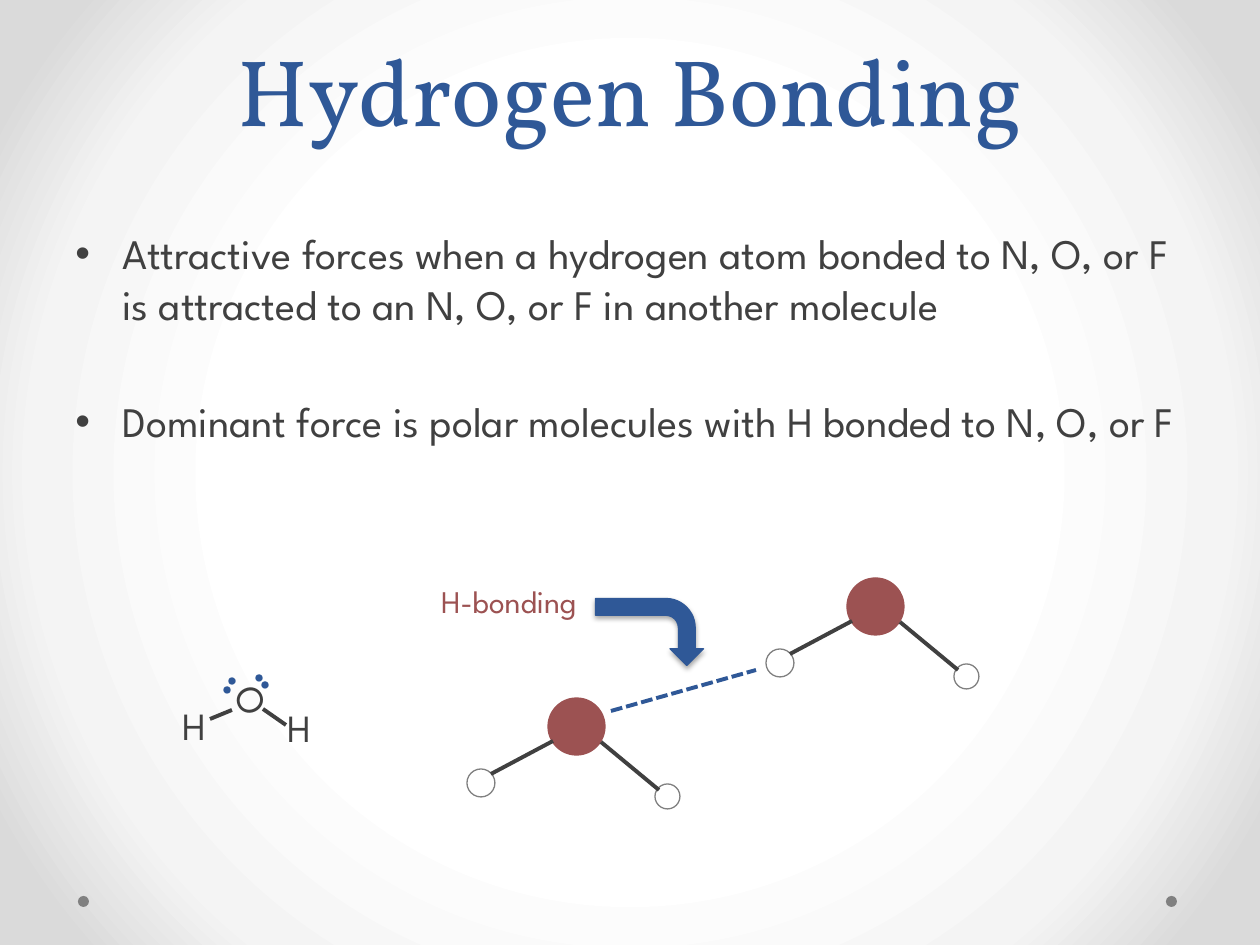
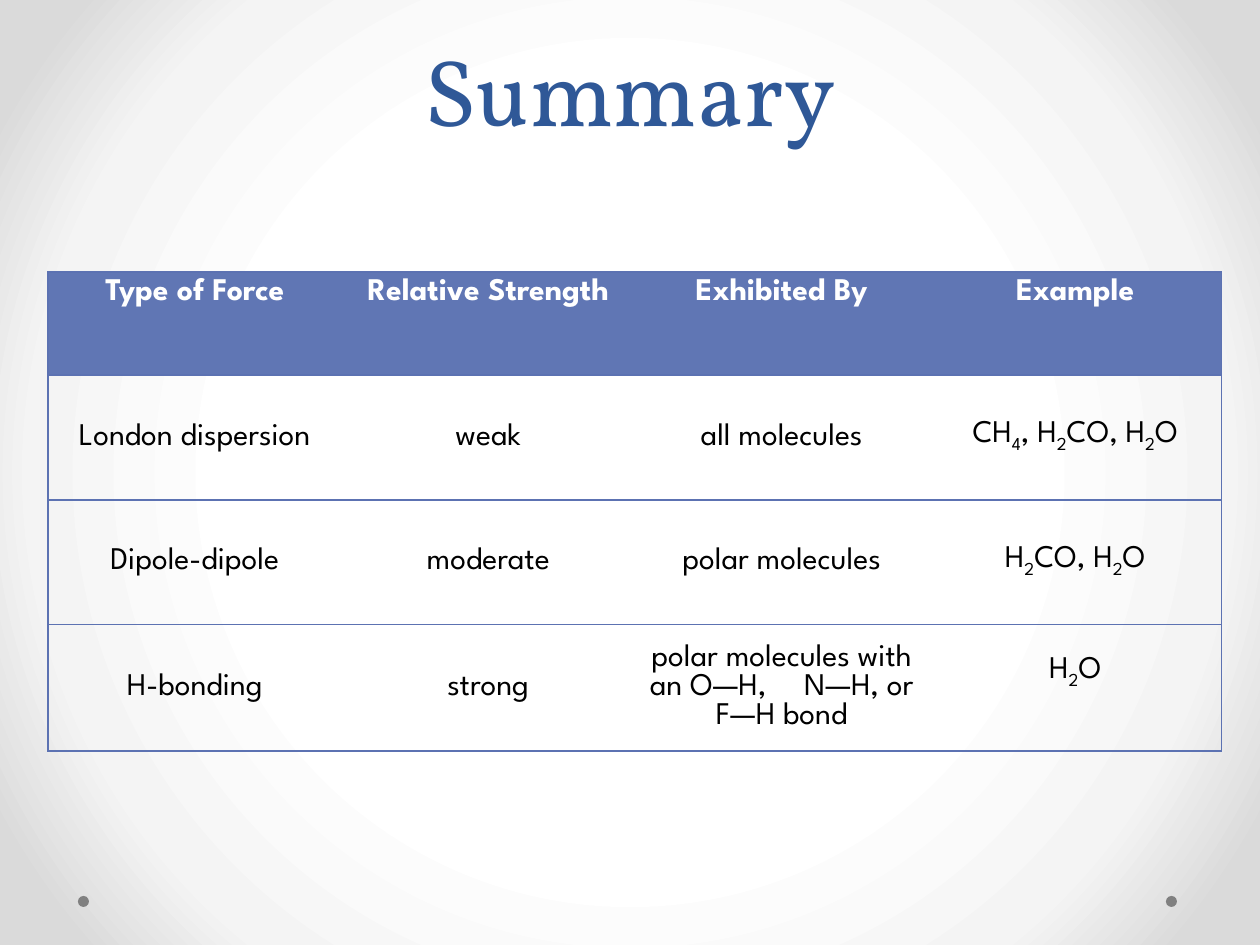
import pptx
import pptx.util
import pptx.dml.color
import pptx.enum.dml
import pptx.enum.shapes
import pptx.enum.text
import pptx.oxml
import pptx.oxml.ns

RGB = pptx.dml.color.RGBColor
Pt = pptx.util.Pt
KIND = pptx.enum.shapes.MSO_SHAPE
ALIGN = pptx.enum.text.PP_ALIGN
ANCHOR = pptx.enum.text.MSO_ANCHOR

BLUE = RGB(0x2F, 0x58, 0x97)
RED = RGB(0x9C, 0x52, 0x52)
DARK = RGB(0x40, 0x40, 0x40)
GREY = RGB(0x80, 0x80, 0x80)
WHITE = RGB(0xFF, 0xFF, 0xFF)
BLACK = RGB(0, 0, 0)
HEAD = RGB(0x60, 0x76, 0xB4)
RULE = RGB(0x5C, 0x72, 0xB2)
GLOW = ((50, "FFFFFF"), (76, "F4F4F4"), (92, "DADADA"))

SERIF = "Vollkorn"
SANS = "League Spartan"
PLAIN = "{2D5ABB26-0587-4C30-8999-92F81FD0307C}"
NS = pptx.oxml.ns.nsdecls("a")

POINTS = (
    "Attractive forces when a hydrogen atom bonded to N, O, or F "
    "is attracted to an N, O, or F in another molecule",
    "Dominant force is polar molecules with H bonded to N, O, or F",
)
# "_" lowers the next letter, "|" widens the next space.
FORCES = (
    ("Type of Force", "Relative Strength", "Exhibited By", "Example"),
    ("London dispersion", "weak", "all molecules", "CH_4, H_2CO, H_2O"),
    ("Dipole-dipole", "moderate", "polar molecules", "H_2CO, H_2O"),
    ("H-bonding", "strong",
     "polar molecules with an O—H,| N—H, or F—H bond", "H_2O"),
)


def px(num):
    return pptx.util.Emu(round(num * 914400 / 126))


def xml(text):
    return pptx.oxml.parse_xml(text)


def style(par, size, color, font=SANS, bold=False):
    for run in par.runs:
        run.font.name = font
        run.font.size = Pt(size)
        run.font.color.rgb = color
        run.font.bold = bold


def label(shapes, box, text, size, color, font=SANS, align=None, wrap=True):
    shape = shapes.add_textbox(*map(px, box))
    frame = shape.text_frame
    frame.word_wrap = wrap
    frame.text = text
    par = frame.paragraphs[0]
    par.alignment = align
    style(par, size, color, font)
    return shape


def solid(shapes, kind, box, fill, edge=None):
    shape = shapes.add_shape(kind, *map(px, box))
    shape.shadow.inherit = False
    shape.fill.solid()
    shape.fill.fore_color.rgb = fill
    if edge is None:
        shape.line.fill.background()
    else:
        shape.line.color.rgb = edge
        shape.line.width = Pt(0.75)
    return shape


def ball(shapes, left, top, size, fill, edge=None):
    return solid(shapes, KIND.OVAL, (left, top, size, size), fill, edge)


def bond(shapes, ends, color=DARK):
    line = shapes.add_connector(
        pptx.enum.shapes.MSO_CONNECTOR.STRAIGHT, *map(px, ends))
    line.line.color.rgb = color
    line.line.width = Pt(2.25)
    line._element.spPr.append(xml(f"<a:effectLst {NS}/>"))
    return line


def page(deck, title):
    """Add a slide with the shared backdrop, corner dots and title."""
    slide = deck.slides.add_slide(deck.slide_layouts[6])
    fill = slide.background.fill
    fill.solid()
    stops = "".join(
        f'<a:gs pos="{pos * 1000}"><a:srgbClr val="{tint}"/></a:gs>'
        for pos, tint in GLOW)
    grad = xml(
        f'<a:gradFill {NS} rotWithShape="1"><a:gsLst>{stops}</a:gsLst>'
        '<a:path path="circle"><a:fillToRect l="50000" t="50000" '
        'r="50000" b="50000"/></a:path></a:gradFill>')
    back = slide._element.cSld.bg.bgPr
    back.replace(back[0], grad)
    for left in (1166, 78):
        ball(slide.shapes, left, 896, 11, GREY)
    shape = label(slide.shapes, (63, 0, 1134, 152), title, 54, BLUE,
                  SERIF, ALIGN.CENTER)
    shape.text_frame.vertical_anchor = ANCHOR.BOTTOM
    shape.text_frame.paragraphs[0].line_spacing = Pt(58)
    return slide


def bullets(slide, box, items):
    shape = slide.shapes.add_textbox(*map(px, box))
    frame = shape.text_frame
    frame.word_wrap = True
    frame.text = "\n".join(items)
    for num, par in enumerate(frame.paragraphs):
        style(par, 24, DARK)
        par.line_spacing = Pt(29)
        par.space_before = Pt(38 if num else 0)
        props = par._p.get_or_add_pPr()
        props.set("marL", str(px(47)))
        props.set("indent", str(px(-47)))
        props.append(xml(f'<a:buFont {NS} typeface="Arial"/>'))
        props.append(xml(f'<a:buChar {NS} char="•"/>'))


def lewis(slide):
    """Draw water as letters, bonds and lone pairs."""
    shapes = slide.shapes.add_group_shape().shapes
    label(shapes, (219, 670, 57, 59), "O", 22, DARK).rotation = 245.5
    label(shapes, (275, 698, 52, 59), "H", 22, DARK, wrap=False)
    label(shapes, (170, 696, 57, 59), "H", 22, DARK)
    for ends in ((263, 709, 286, 725), (210, 719, 232, 710)):
        bond(shapes, ends)
    for left, top in ((229, 678), (224, 687), (256, 675), (262, 682)):
        ball(shapes, left, top, 6, BLUE, BLUE)


def water(slide, left, top):
    """Draw water as balls, with its oxygen at left, top."""
    shapes = slide.shapes.add_group_shape().shapes
    ball(shapes, left, top, 57, RED, RED)
    for dx, dy, size in ((107, 86, 25), (-81, 71, 28)):
        ball(shapes, left + dx, top + dy, size, WHITE, GREY)
    for x1, y1, x2, y2 in ((111, 92, 53, 44), (5, 43, -57, 76)):
        bond(shapes, (left + x1, top + y1, left + x2, top + y2))


def arrow(slide):
    shape = solid(slide.shapes, KIND.BENT_ARROW, (616, 578, 67, 108),
                  BLUE, BLUE)
    shape.rotation = 90
    props = shape._element.spPr
    props.replace(props.find(pptx.oxml.ns.qn("a:effectLst")), xml(
        f'<a:effectLst {NS}><a:outerShdw blurRad="{Pt(3.1)}" '
        f'dist="{Pt(1.8)}" dir="5400000" rotWithShape="0">'
        '<a:srgbClr val="000000"><a:alpha val="35000"/></a:srgbClr>'
        '</a:outerShdw></a:effectLst>'))


def write(par, text):
    """Set text, turning each mark into a run of its own."""
    first, *rest = text.replace("|", "_").split("_")
    par.add_run().text = first
    for part in rest:
        run = par.add_run()
        run.text = part[0]
        name, value = (("spc", "1700") if part[0] == " "
                       else ("baseline", "-25000"))
        run._r.get_or_add_rPr().set(name, value)
        if part[1:]:
            par.add_run().text = part[1:]


def border(cell, sides):
    props = cell._tc.get_or_add_tcPr()
    for num, side in enumerate(sides):
        props.insert(num, xml(
            f'<a:ln{side} {NS} w="{Pt(0.75)}"><a:solidFill>'
            f'<a:srgbClr val="{RULE}"/></a:solidFill></a:ln{side}>'))


def grid(slide, box, data, heights):
    rows, cols = len(data), len(data[0])
    table = slide.shapes.add_table(rows, cols, *map(px, box)).table
    table._tbl.tblPr.find(pptx.oxml.ns.qn("a:tableStyleId")).text = PLAIN
    for row, high in zip(table.rows, heights):
        row.height = px(high)
    for r, line in enumerate(data):
        for c, text in enumerate(line):
            cell = table.cell(r, c)
            par = cell.text_frame.paragraphs[0]
            par.alignment = ALIGN.CENTER
            write(par, text)
            if r == 0:
                style(par, 18, WHITE, bold=True)
                cell.fill.solid()
                cell.fill.fore_color.rgb = HEAD
            else:
                style(par, 18, BLACK)
                cell.vertical_anchor = ANCHOR.MIDDLE
                cell.fill.background()
            border(cell, "L" * (c == 0) + "R" * (c == cols - 1) + "TB")
    return table


def bonding(deck):
    slide = page(deck, "Hydrogen Bonding")
    bullets(slide, (63, 221, 1134, 624), POINTS)
    lewis(slide)
    water(slide, 548, 698)
    water(slide, 847, 578)
    dash = bond(slide.shapes, (611, 711, 756, 670), BLUE)
    dash.line.dash_style = pptx.enum.dml.MSO_LINE.SQUARE_DOT
    arrow(slide)
    label(slide.shapes, (404, 576, 210, 50), "H-bonding", 18, RED,
          align=ALIGN.CENTER)


def summary(deck):
    slide = page(deck, "Summary")
    table = grid(slide, (48, 272, 1174, 478), FORCES, (103, 125, 125, 125))
    table.cell(3, 3).margin_bottom = px(36)


def main():
    deck = pptx.Presentation()
    deck.slide_width = px(1260)
    deck.slide_height = px(945)
    bonding(deck)
    summary(deck)
    deck.save("out.pptx")


if __name__ == "__main__":
    main()
